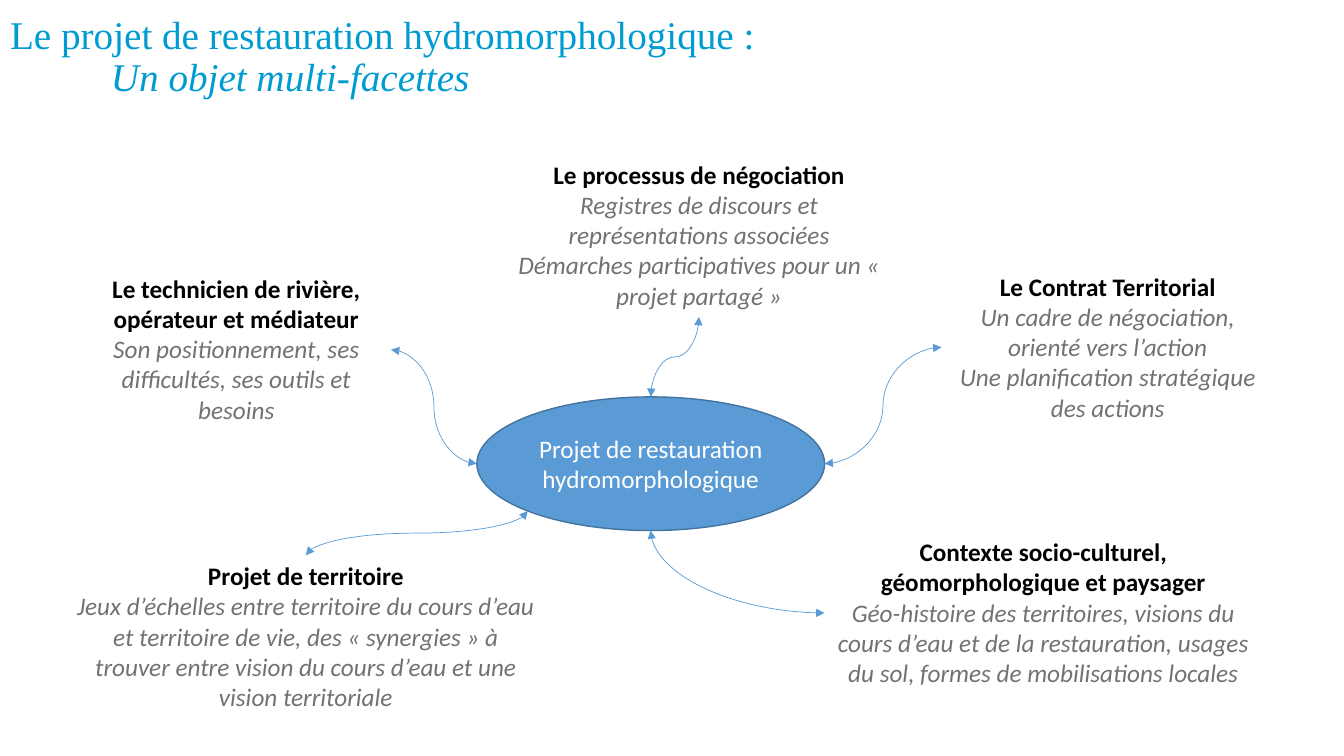
from lxml import etree
from pptx import Presentation
from pptx.dml.color import RGBColor
from pptx.enum import shapes, text
from pptx.oxml import ns
from pptx.util import Pt

TITLE_BLUE = RGBColor(0x00, 0x9C, 0xD1)
FILL_BLUE = RGBColor(0x5B, 0x9B, 0xD5)
OUTLINE_BLUE = RGBColor(0x43, 0x73, 0x9E)
BLACK = RGBColor(0x00, 0x00, 0x00)
GREY = RGBColor(0x76, 0x71, 0x71)
WHITE = RGBColor(0xFF, 0xFF, 0xFF)

# Each facet: left, top, width, height in points, heading, details
FACETS = [
    (58.3, 191.5, 221, 116.6, "Le technicien de rivière, opérateur et médiateur",
     ["Son positionnement, ses difficultés, ses outils et besoins"]),
    (362.9, 110, 272.9, 116.6, "Le processus de négociation",
     ["Registres de discours et représentations associées",
      "Démarches participatives pour un « projet partagé »"]),
    (672.5, 190, 237.6, 116.6, "Le Contrat Territorial",
     ["Un cadre de négociation, orienté vers l’action",
      "Une planification stratégique des actions"]),
    (589, 379.6, 312.5, 116.6, "Contexte socio-culturel, géomorphologique et paysager",
     ["Géo-histoire des territoires, visions du cours d’eau et de la "
      "restauration, usages du sol, formes de mobilisations locales"]),
    (46, 396.7, 344.9, 116.6, "Projet de territoire",
     ["Jeux d’échelles entre territoire du cours d’eau et territoire de vie, "
      "des « synergies » à trouver entre vision du cours d’eau et une vision "
      "territoriale"]),
]


def format_runs(paragraph, name, size, color, bold=False, italic=False):
    for run in paragraph.runs:
        font = run.font
        font.name, font.size = name, Pt(size)
        font.bold, font.italic = bold, italic
        font.color.rgb = color


def add_title(slide):
    title = slide.shapes.title
    title.left, title.top, title.width, title.height = Pt(0), Pt(-2), Pt(672.5), Pt(86.4)
    frame = title.text_frame
    frame.auto_size = text.MSO_AUTO_SIZE.NONE
    frame.vertical_anchor = text.MSO_ANCHOR.MIDDLE
    frame.text = "Le projet de restauration hydromorphologique :\v\tUn objet multi-facettes"
    paragraph = frame.paragraphs[0]
    paragraph.alignment = text.PP_ALIGN.LEFT
    paragraph.line_spacing = 0.9
    format_runs(paragraph, "Times New Roman", 28, TITLE_BLUE)
    paragraph.runs[-1].font.italic = True
    # Tab stop that indents the second line
    tab_list = etree.SubElement(paragraph._p.get_or_add_pPr(), ns.qn("a:tabLst"))
    etree.SubElement(tab_list, ns.qn("a:tab"), pos=str(Pt(72)), algn="l")


def add_project(slide):
    shape = slide.shapes.add_shape(
        shapes.MSO_SHAPE.OVAL, Pt(340.6), Pt(283.5), Pt(248.4), Pt(95.5))
    shape.shadow.inherit = False
    shape.fill.solid()
    shape.fill.fore_color.rgb = FILL_BLUE
    shape.line.color.rgb = OUTLINE_BLUE
    shape.line.width = Pt(1)
    frame = shape.text_frame
    frame.word_wrap = True
    frame.vertical_anchor = text.MSO_ANCHOR.MIDDLE
    frame.text = "Projet de restauration hydromorphologique"
    frame.paragraphs[0].alignment = text.PP_ALIGN.CENTER
    format_runs(frame.paragraphs[0], "Calibri", 18, WHITE)


def add_facet(slide, left, top, width, height, heading, details):
    shape = slide.shapes.add_textbox(Pt(left), Pt(top), Pt(width), Pt(height))
    frame = shape.text_frame
    frame.word_wrap = True
    frame.text = "\n".join([heading] + details)
    for index, paragraph in enumerate(frame.paragraphs):
        paragraph.alignment = text.PP_ALIGN.CENTER
        if index == 0:
            format_runs(paragraph, "Calibri", 18, BLACK, bold=True)
        else:
            format_runs(paragraph, "Calibri", 18, GREY, italic=True)


def add_curve(slide, x1, y1, x2, y2, vertical=False, quarter=False):
    """Add a double-headed curve; a vertical one runs from top right to bottom left."""
    if vertical:
        # A quarter turn swaps the width and height around the same centre
        center_x, center_y = (x1 + x2) / 2, (y1 + y2) / 2
        half_width, half_height = (y2 - y1) / 2, (x1 - x2) / 2
        x1, x2 = center_x - half_width, center_x + half_width
        y1, y2 = center_y - half_height, center_y + half_height
    connector = slide.shapes.add_connector(
        shapes.MSO_CONNECTOR.CURVE, Pt(x1), Pt(y1), Pt(x2), Pt(y2))
    connector.line.color.rgb = FILL_BLUE
    connector.line.width = Pt(0.5)
    properties = connector._element.spPr
    if vertical:
        properties.find(ns.qn("a:xfrm")).set("rot", "5400000")
    if quarter:
        properties.find(ns.qn("a:prstGeom")).set("prst", "curvedConnector2")
    line = connector.line._get_or_add_ln()
    for end in ("a:headEnd", "a:tailEnd"):
        etree.SubElement(line, ns.qn(end), type="triangle")
    etree.SubElement(properties, ns.qn("a:effectLst"))


def main():
    presentation = Presentation()
    presentation.slide_width, presentation.slide_height = Pt(960), Pt(540)
    slide = presentation.slides.add_slide(presentation.slide_layouts[5])

    # Title, central project and its facets
    add_title(slide)
    add_project(slide)
    for facet in FACETS:
        add_facet(slide, *facet)

    # Curves between the project and each facet
    add_curve(slide, 499.3, 226.4, 464.8, 283.5, vertical=True)
    add_curve(slide, 672.5, 248, 589, 331.2)
    add_curve(slide, 589, 437.9, 464.8, 379, quarter=True)
    add_curve(slide, 377, 365, 218.4, 396.7, vertical=True)
    add_curve(slide, 340.6, 331.2, 279.3, 249.8)

    presentation.save("out.pptx")


if __name__ == "__main__":
    main()
